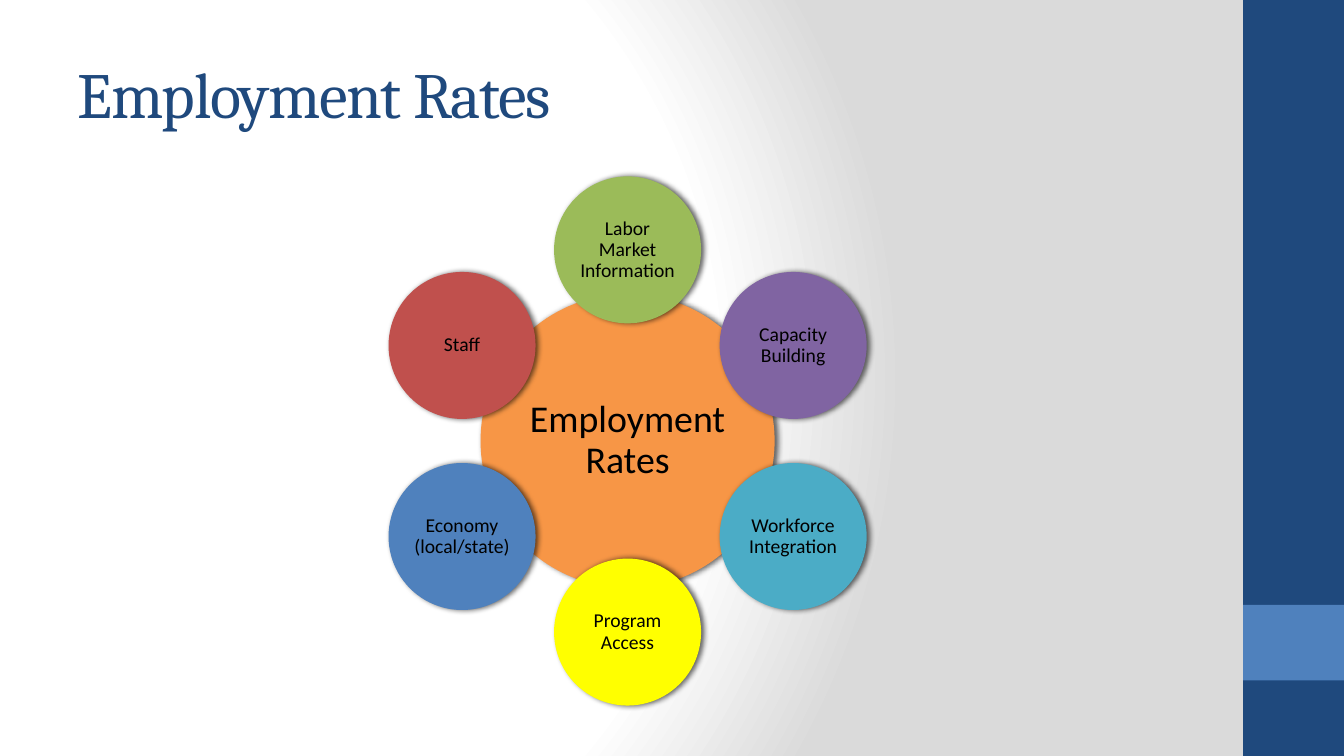
from math import cos, radians, sin

from pptx import Presentation
from pptx.dml.color import RGBColor
from pptx.enum.shapes import MSO_SHAPE
from pptx.enum.text import MSO_ANCHOR, MSO_AUTO_SIZE, PP_ALIGN
from pptx.oxml import parse_xml
from pptx.oxml.ns import nsdecls, qn
from pptx.util import Inches, Pt

RECTANGLE = MSO_SHAPE.RECTANGLE
OVAL = MSO_SHAPE.OVAL
MIDDLE = MSO_ANCHOR.MIDDLE
CENTER = PP_ALIGN.CENTER
LEFT = PP_ALIGN.LEFT
NO_AUTOFIT = MSO_AUTO_SIZE.NONE

NAVY = "1F497D"
BLUE = "4F81BD"
BLACK = "000000"

FACTORS = [
    ("Labor Market Information", "9BBB59"),
    ("Capacity Building", "8064A2"),
    ("Workforce Integration", "4BACC6"),
    ("Program Access", "FFFF00"),
    ("Economy (local/state)", BLUE),
    ("Staff", "C0504D"),
]


def color(value):
    return RGBColor.from_string(value)


def add_filled(slide, preset, left, top, width, height, fill):
    shape = slide.shapes.add_shape(
        preset, Inches(left), Inches(top), Inches(width), Inches(height))
    shape.shadow.inherit = False
    shape.fill.solid()
    shape.fill.fore_color.rgb = color(fill)
    shape.line.fill.background()
    return shape


def style_text(frame, font_name, size, ink, alignment):
    frame.word_wrap = True
    frame.auto_size = NO_AUTOFIT
    frame.vertical_anchor = MIDDLE
    paragraph = frame.paragraphs[0]
    paragraph.alignment = alignment
    font = paragraph.runs[0].font
    font.name = font_name
    font.size = Pt(size)
    font.color.rgb = color(ink)
    return paragraph


def add_background(slide):
    slide.element.cSld.insert(0, parse_xml(
        f'<p:bg {nsdecls("p", "a")}><p:bgPr><a:gradFill rotWithShape="1"><a:gsLst>'
        '<a:gs pos="0"><a:srgbClr val="FFFFFF"/></a:gs>'
        '<a:gs pos="75000"><a:srgbClr val="FFFFFF"/></a:gs>'
        '<a:gs pos="100000"><a:srgbClr val="DADADA"/></a:gs></a:gsLst>'
        '<a:path path="circle">'
        '<a:fillToRect l="20000" t="50000" r="100000" b="50000"/></a:path>'
        '</a:gradFill><a:effectLst/></p:bgPr></p:bg>'))


def add_side_band(slide, left, top, width, height):
    add_filled(slide, RECTANGLE, left, top, width, height, NAVY)
    add_filled(slide, RECTANGLE, left, top + 0.8 * height, width, 0.1 * height, BLUE)


def add_title(slide, left, top, width, height):
    title = slide.shapes.title
    title.left, title.top = Inches(left), Inches(top)
    title.width, title.height = Inches(width), Inches(height)
    title.text_frame.text = "Employment Rates"
    heading = style_text(title.text_frame, "Cambria", 46, NAVY, LEFT)
    heading.runs[0].font._element.set("spc", "-100")


def add_circle(slide, center_x, center_y, diameter, label, fill, size, inset):
    circle = add_filled(slide, OVAL, center_x - diameter / 2,
                        center_y - diameter / 2, diameter, diameter, fill)
    effects = circle.element.spPr.find(qn("a:effectLst"))
    effects.append(parse_xml(
        f'<a:outerShdw {nsdecls("a")} blurRad="{Pt(4)}" dist="{Pt(2)}" dir="0" '
        'rotWithShape="0"><a:srgbClr val="000000"><a:alpha val="60000"/>'
        '</a:srgbClr></a:outerShdw>'))
    frame = circle.text_frame
    frame.margin_left = frame.margin_right = Inches(inset)
    frame.margin_top = frame.margin_bottom = Inches(inset)
    frame.text = label
    style_text(frame, "Calibri", size, BLACK, CENTER).line_spacing = 0.9


def add_factor_wheel(slide, left, top, width, height):
    center_x, center_y = left + width / 2, top + height / 2
    hub = height * 5 / 9
    satellite = hub / 2
    orbit = (height - satellite) / 2
    add_circle(slide, center_x, center_y, hub, "Employment Rates", "F79646", 27, 0.04)
    for index, (factor, fill) in enumerate(FACTORS):
        angle = radians(index * 360 / len(FACTORS) - 90)
        add_circle(slide, center_x + orbit * cos(angle), center_y + orbit * sin(angle),
                   satellite, factor, fill, 14, 0.02)


def main():
    deck = Presentation()
    deck.slide_width, deck.slide_height = Inches(13.33), Inches(7.5)
    slide = deck.slides.add_slide(deck.slide_layouts[5])
    add_background(slide)
    add_side_band(slide, 12.33, 0, 1, 7.5)
    add_title(slide, 0.67, 0.3, 11.11, 1.25)
    add_factor_wheel(slide, 3.85, 1.75, 4.75, 5.25)
    deck.save("out.pptx")


if __name__ == "__main__":
    main()
